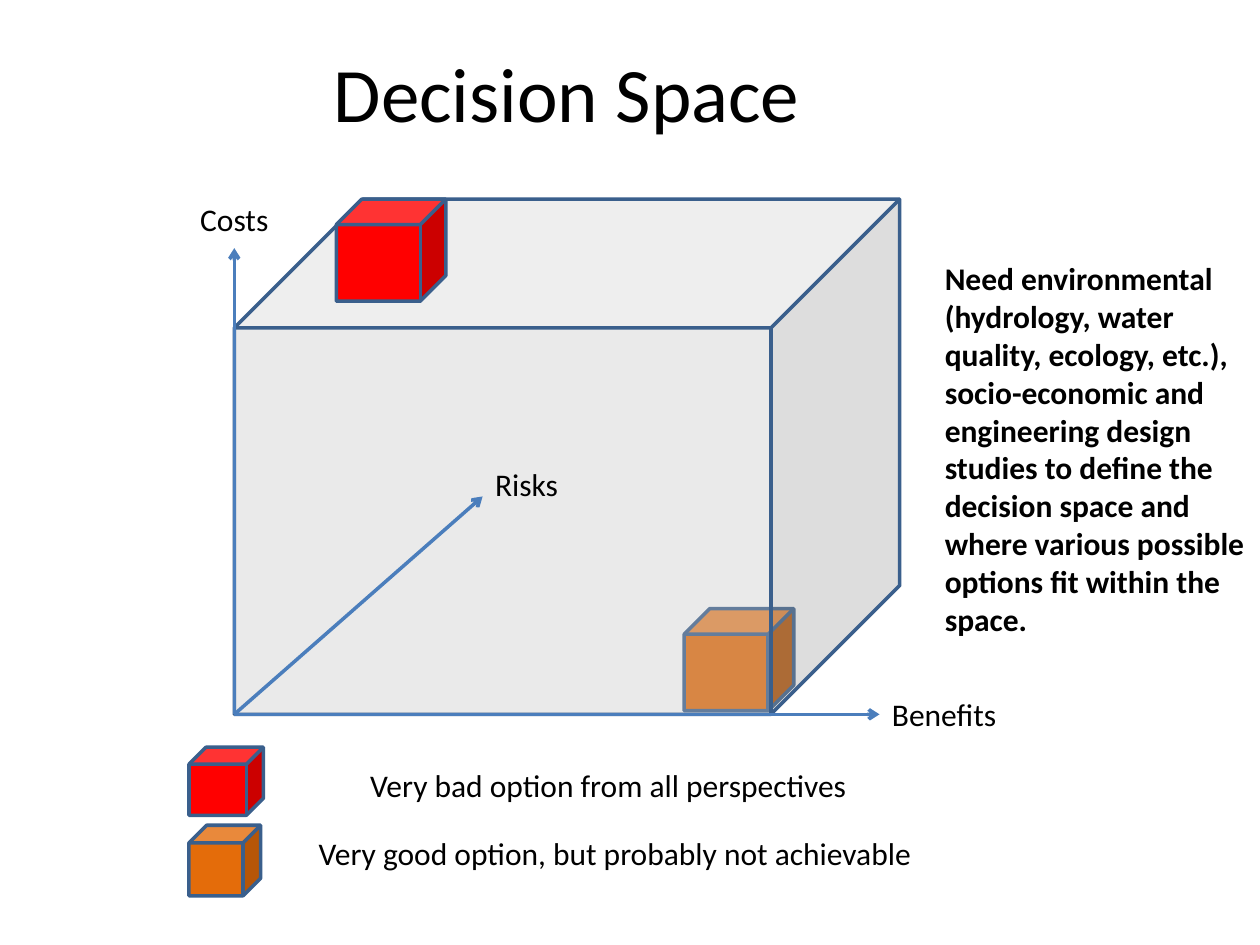
from pptx import Presentation
from pptx.dml.color import RGBColor as Rgb
from pptx.enum.shapes import MSO_CONNECTOR as Conn, MSO_SHAPE as Kind
from pptx.enum.text import MSO_ANCHOR as Anchor, PP_ALIGN as Align
from pptx.oxml.ns import qn
from pptx.util import Pt
from lxml.etree import SubElement as Sub

FONT = "Calibri"
HUES = {
    "text": "000000",
    "edge": "3A5F8C",
    "axis": "4B7EBC",
    "space": "BFBFBF",
    "bad": "FF0000",
    "good": "E46C0A",
}
ROOT = (133.9, 408.2)  # where the three axes meet


def hue(name):
    return Rgb.from_string(HUES[name])


def add_text(slide, text, box, size=18, bold=False, wrap=False,
             align=Align.LEFT, anchor=Anchor.TOP):
    frame = slide.shapes.add_textbox(*map(Pt, box)).text_frame
    frame.word_wrap = wrap
    frame.vertical_anchor = anchor
    frame.text = text
    para = frame.paragraphs[0]
    para.alignment = align
    font = para.runs[0].font
    font.name, font.size, font.bold = FONT, Pt(size), bold
    font.color.rgb = hue("text")


def add_cube(slide, name, box, alpha=None):
    cube = slide.shapes.add_shape(Kind.CUBE, *map(Pt, box))
    cube.shadow.inherit = False
    cube.fill.solid()
    cube.fill.fore_color.rgb = hue(name)
    cube.line.color.rgb = hue("edge")
    cube.line.width = Pt(2)
    if alpha:
        tint = cube.fill._xPr.find(qn("a:solidFill"))[0]
        Sub(tint, qn("a:alpha"), val=str(alpha * 1000))


def add_axis(slide, tip):
    axis = slide.shapes.add_connector(Conn.STRAIGHT, *map(Pt, ROOT + tip))
    axis.line.color.rgb = hue("axis")
    axis.line.width = Pt(2)
    Sub(axis.line._get_or_add_ln(), qn("a:tailEnd"), type="arrow")
    Sub(axis._element.spPr, qn("a:effectLst"))


def main():
    deck = Presentation()
    deck.slide_width, deck.slide_height = Pt(720), Pt(540)
    slide = deck.slides.add_slide(deck.slide_layouts[6])

    # Title and side note
    add_text(slide, "Decision Space", (0, 21.6, 648, 61.2), size=44,
             align=Align.CENTER, anchor=Anchor.MIDDLE)
    add_text(slide, "Need environmental (hydrology, water quality, ecology, "
             "etc.), socio-economic and engineering design studies to define "
             "the decision space and where various possible options fit "
             "within the space.", (532.8, 144.7, 187.2, 225.4),
             bold=True, wrap=True)

    # Good option, seen through the decision space
    add_cube(slide, "good", (391, 347.8, 62.6, 58.3))
    add_cube(slide, "space", (133.9, 113.8, 380.2, 294.4), alpha=32)

    # Axes with their labels
    axes = [
        ("Risks", (275.8, 283.7), (275.8, 262.1, 50.4, 28.8)),
        ("Benefits", (502.6, ROOT[1]), (502.6, 393.8, 74.9, 28.8)),
        ("Costs", (ROOT[0], 141.8), (107.3, 110.9, 54, 28.8)),
    ]
    for label, tip, box in axes:
        add_axis(slide, tip)
        add_text(slide, label, box)

    # Bad option, at the far top corner
    add_cube(slide, "bad", (192.2, 113.8, 62.6, 58.3))

    # Legend
    legend = [
        ("bad", (108, 427, 42.5, 38.9),
         "Very bad option from all perspectives", (204.5, 434.2, 290.2, 28.8)),
        ("good", (108, 471.6, 41, 40.3),
         "Very good option, but probably not achievable",
         (175, 473, 364.3, 28.8)),
    ]
    for name, key, text, box in legend:
        add_cube(slide, name, key)
        add_text(slide, text, box)

    deck.save("out.pptx")


if __name__ == "__main__":
    main()
